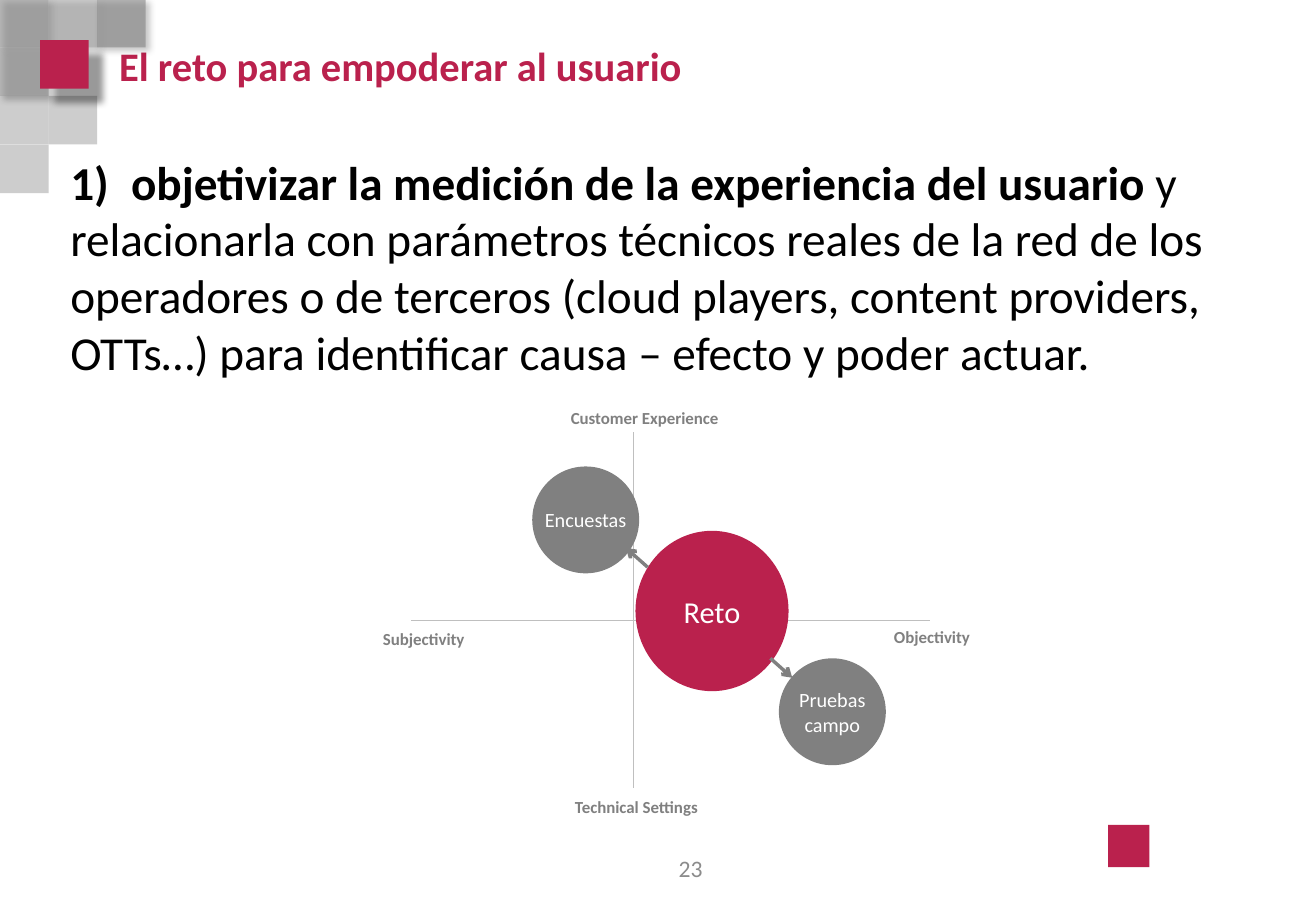
from lxml.etree import SubElement
from pptx import Presentation
from pptx.dml.color import RGBColor
from pptx.enum.shapes import MSO_CONNECTOR, MSO_SHAPE
from pptx.enum.text import MSO_ANCHOR, PP_ALIGN
from pptx.oxml.ns import qn
from pptx.util import Inches, Pt

CELL = 0.1
TILE = 4
TILES_TOP = -0.1
CRIMSON, GRAY, SILVER, PALE = "BA214D", "808080", "A6A6A6", "BFBFBF"
WHITE, BLACK, NUMBER_GRAY = "FFFFFF", "000000", "8C8C8C"

TILES = [
    (1, 2, SILVER, False), (0, 2, SILVER, False), (1, 0, SILVER, True),
    (2, 0, GRAY, True), (0, 0, GRAY, True), (0, 1, GRAY, True),
    (0, 3, SILVER, False),
]
AXES = [(76.5, 51.1, 33.8, 51.1), (52.1, 35.6, 52.1, 64.9)]
AXIS_LABELS = [
    ("Technical Settings", 46, 65.1, 12.4),
    ("Customer Experience", 45.7, 33.1, 14.4),
    ("Objectivity", 72.4, 51.1, 8.4),
    ("Subjectivity", 30.3, 51.3, 8.9),
]
CIRCLES = [
    (["Reto"], (52.3, 43.7, 12.6, 13.2), CRIMSON, 18),
    (["Encuestas"], (43.8, 38.4, 8.8, 8.8), GRAY, 12),
    (["Pruebas", "campo"], (64.1, 54.2, 8.8, 8.8), GRAY, 12),
]
ARROWS = [(53.3, 46.7, 51.5, 45.1), (63.4, 54.2, 65.2, 55.8)]


def color(hex_string):
    return RGBColor.from_string(hex_string)


def grid(*cells):
    return [Inches(cell * CELL) for cell in cells]


def add_run(paragraph, text, size, hex_string, bold=False):
    run = paragraph.add_run()
    run.text = text
    run.font.name = "Calibri"
    run.font.size = Pt(size)
    run.font.bold = bold
    run.font.color.rgb = color(hex_string)


def set_frame(frame, inset_x, inset_y, anchor=MSO_ANCHOR.TOP, wrap=True):
    frame.word_wrap = wrap
    frame.vertical_anchor = anchor
    frame.margin_left = frame.margin_right = Inches(inset_x)
    frame.margin_top = frame.margin_bottom = Inches(inset_y)


def add_text(slide, cells, align, anchor=MSO_ANCHOR.TOP, wrap=True):
    frame = slide.shapes.add_textbox(*grid(*cells)).text_frame
    set_frame(frame, 0.1, 0.05, anchor, wrap)
    paragraph = frame.paragraphs[0]
    paragraph.alignment = align
    return paragraph


def add_solid(slide, preset, cells, hex_string):
    solid = slide.shapes.add_shape(preset, *grid(*cells))
    solid.shadow.inherit = False
    solid.fill.solid()
    solid.fill.fore_color.rgb = color(hex_string)
    solid.line.fill.background()
    return solid


def set_alpha(color_element, percent):
    SubElement(color_element, qn("a:alpha"), val=str(percent * 1000))


def add_shadow(solid, distance):
    effects = solid.element.spPr.find(qn("a:effectLst"))
    shadow = SubElement(
        effects, qn("a:outerShdw"), blurRad=str(Pt(4)), dist=str(Pt(distance)),
        dir=str(45 * 60000), algn="tl", rotWithShape="0")
    set_alpha(SubElement(shadow, qn("a:srgbClr"), val=BLACK), 40)


def add_tile(slide, column, row, hex_string, shadowed):
    cells = (column * TILE, TILES_TOP + row * TILE, TILE, TILE)
    tile = add_solid(slide, MSO_SHAPE.RECTANGLE, cells, hex_string)
    set_alpha(next(tile.element.spPr.iter(qn("a:srgbClr"))), 56)
    if shadowed:
        add_shadow(tile, 3)


def add_line(slide, ends, hex_string, width, arrow=False):
    line = slide.shapes.add_connector(MSO_CONNECTOR.STRAIGHT, *grid(*ends))
    line.line.color.rgb = color(hex_string)
    line.line.width = Pt(width)
    if arrow:
        SubElement(line.line._get_or_add_ln(), qn("a:tailEnd"), type="arrow")
    SubElement(line.element.spPr, qn("a:effectLst"))


def add_circle(slide, words, cells, hex_string, size):
    circle = add_solid(slide, MSO_SHAPE.OVAL, cells, hex_string)
    frame = circle.text_frame
    set_frame(frame, 0, 0, MSO_ANCHOR.MIDDLE, wrap=False)
    for index, word in enumerate(words):
        paragraph = frame.add_paragraph() if index else frame.paragraphs[0]
        paragraph.alignment = PP_ALIGN.CENTER
        add_run(paragraph, word, size, WHITE)


def add_title(slide, text):
    title = slide.shapes.title
    title.left, title.top, title.width, title.height = grid(8.9, 3, 97.7, 4.9)
    set_frame(title.text_frame, 0.09, 0.04)
    paragraph = title.text_frame.paragraphs[0]
    paragraph.alignment = PP_ALIGN.LEFT
    add_run(paragraph, text, 24, CRIMSON, bold=True)


def add_challenge(slide):
    challenge = add_text(slide, (4.8, 12.1, 104.9, 19.9), PP_ALIGN.LEFT)
    tabs = SubElement(challenge._p.get_or_add_pPr(), qn("a:tabLst"))
    SubElement(tabs, qn("a:tab"), pos=str(Inches(0.5)), algn="l")
    add_run(challenge, "1)\tobjetivizar la medición de la experiencia del usuario ",
            28, BLACK, bold=True)
    add_run(challenge, "y relacionarla con parámetros técnicos reales de la red de "
            "los operadores o de terceros (cloud players, content providers, "
            "OTTs…) para identificar causa – efecto y poder actuar.", 28, BLACK)


def main():
    presentation = Presentation()
    presentation.slide_width, presentation.slide_height = grid(108.3, 75)
    slide = presentation.slides.add_slide(presentation.slide_layouts[5])

    for tile in TILES:
        add_tile(slide, *tile)
    accent = add_solid(slide, MSO_SHAPE.RECTANGLE, (3.3, 3.3, TILE, TILE), CRIMSON)
    add_shadow(accent, 12)
    add_title(slide, "El reto para empoderar al usuario")
    add_challenge(slide)

    for axis in AXES:
        add_line(slide, axis, PALE, 0.25)
    for text, left, top, width in AXIS_LABELS:
        label = add_text(slide, (left, top, width, 2.7), PP_ALIGN.RIGHT, wrap=False)
        add_run(label, text, 10, GRAY, bold=True)
    for circle in CIRCLES:
        add_circle(slide, *circle)
    for arrow in ARROWS:
        add_line(slide, arrow, GRAY, 2, arrow=True)

    page_number = add_text(slide, (33.5, 69.5, 25.3, 4), PP_ALIGN.RIGHT,
                           MSO_ANCHOR.MIDDLE)
    add_run(page_number, "23", 14, NUMBER_GRAY)
    add_solid(slide, MSO_SHAPE.RECTANGLE, (91.2, 67.9, 3.4, 3.5), CRIMSON)
    presentation.save("out.pptx")


if __name__ == "__main__":
    main()
